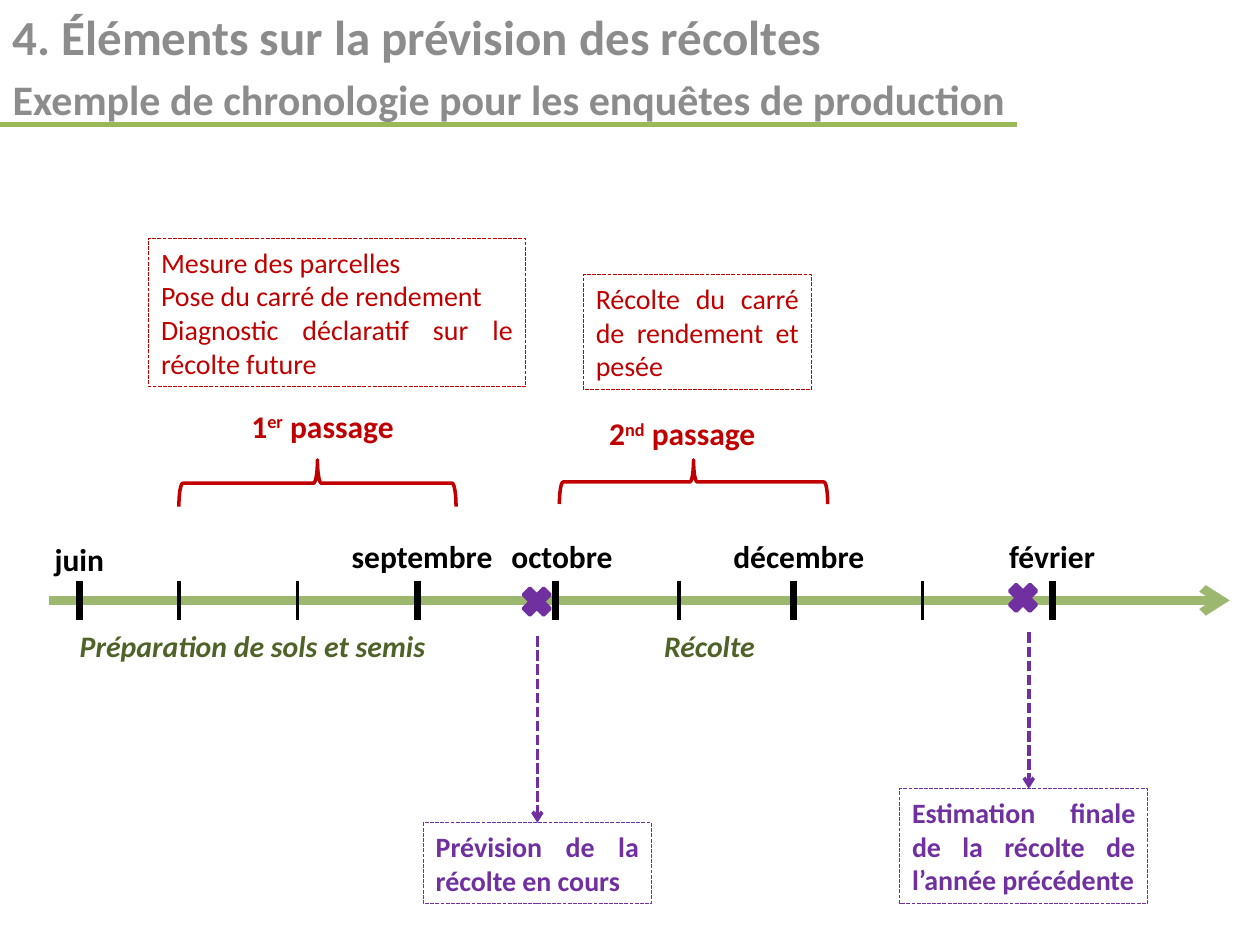
import pptx
import lxml.etree as etree
import pptx.util
from pptx.dml.color import RGBColor
from pptx.enum.dml import MSO_LINE
from pptx.enum.shapes import MSO_CONNECTOR, MSO_SHAPE
from pptx.enum.text import MSO_ANCHOR, MSO_AUTO_SIZE, PP_ALIGN
from pptx.oxml.ns import qn

WIDE, HIGH = pptx.util.Inches(10), pptx.util.Inches(7.5)
COLS, ROWS = 100, 75

GREY = RGBColor(0x8C, 0x8C, 0x8C)
LIME = RGBColor(0x98, 0xB9, 0x55)
GREEN = RGBColor(0x9C, 0xB8, 0x6E)
OLIVE = RGBColor(0x4F, 0x62, 0x28)
RED = RGBColor(0xC0, 0x00, 0x00)
PURPLE = RGBColor(0x70, 0x30, 0xA0)
BLACK = RGBColor(0x00, 0x00, 0x00)


def across(cols):
    return round(WIDE * cols / COLS)


def down(rows):
    return round(HIGH * rows / ROWS)


def place(box):
    """Turn left, top, width and height in grid cells into lengths."""
    left, top, width, height = box
    return across(left), down(top), across(width), down(height)


def style(para, size, color, bold=False, slant=False, align=PP_ALIGN.LEFT):
    para.alignment = align
    for run in para.runs:
        font = run.font
        font.name, font.size = "Calibri", pptx.util.Pt(size)
        font.bold, font.italic = bold, slant
        font.color.rgb = color


def rule(slide, start, end, color, weight, dash=None, arrow=False):
    line = slide.shapes.add_connector(
        MSO_CONNECTOR.STRAIGHT,
        across(start[0]), down(start[1]), across(end[0]), down(end[1]))
    line.line.color.rgb = color
    line.line.width = pptx.util.Pt(weight)
    if dash:
        line.line.dash_style = dash
    props = line.element.spPr
    if arrow:
        tip = etree.SubElement(props.find(qn("a:ln")), qn("a:tailEnd"))
        tip.set("type", "arrow")
    etree.SubElement(props, qn("a:effectLst"))


def shape(slide, kind, box, color, weight):
    """Add an unfilled preset shape with a plain outline."""
    form = slide.shapes.add_shape(kind, *place(box))
    form.shadow.inherit = False
    form.fill.background()
    form.line.color.rgb = color
    form.line.width = pptx.util.Pt(weight)
    return form


def label(slide, box, parts, size, color, slant=False):
    """Centred bold text; the second of several parts is raised."""
    frame = slide.shapes.add_textbox(*place(box)).text_frame
    frame.word_wrap = True
    frame.auto_size = MSO_AUTO_SIZE.SHAPE_TO_FIT_TEXT
    para = frame.paragraphs[0]
    for spot, part in enumerate(parts):
        run = para.add_run()
        run.text = part
        if spot == 1:
            run.font.bold = True
            para.runs[spot].font.size = pptx.util.Pt(size)
            props = para.runs[spot]._r.find(qn("a:rPr"))
            props.set("baseline", "30000")
    style(para, size, color, True, slant, PP_ALIGN.CENTER)


def note(slide, box, text, color, bold=False):
    form = shape(slide, MSO_SHAPE.RECTANGLE, box, color, 0.75)
    form.line.dash_style = MSO_LINE.SQUARE_DOT
    frame = form.text_frame
    frame.word_wrap = True
    frame.auto_size = MSO_AUTO_SIZE.SHAPE_TO_FIT_TEXT
    frame.vertical_anchor = MSO_ANCHOR.MIDDLE
    frame.text = text
    for para in frame.paragraphs:
        style(para, 16, color, bold, align=PP_ALIGN.JUSTIFY)


def heading(slide, box):
    left, top, width, height = box
    title = slide.shapes.title.element
    title.getparent().remove(title)
    body = slide.placeholders[1]
    body.left, body.top, body.width, body.height = place(box)
    frame = body.text_frame
    frame.vertical_anchor = MSO_ANCHOR.TOP
    frame.text = ("4. Éléments sur la prévision des récoltes\n"
                  "Exemple de chronologie pour les enquêtes de production")
    for para, size in zip(frame.paragraphs, (28, 24)):
        style(para, size, GREY, True)
    base = top + height * 0.9
    rule(slide, (left, base), (left + width * 0.807, base), LIME, 3)


def axis(slide, box):
    """Time arrow with month ticks; named months get a thick tick."""
    left, top, width, height = box
    mid = top + height / 2
    rule(slide, (left, mid), (left + width, mid), GREEN, 5, arrow=True)
    # tick offset, month, label shift, label rise
    months = [(2.4, "juin", 0, 3.7), (10.3, "", 0, 0), (19.7, "", 0, 0),
              (29.2, "septembre", 0.4, 4), (40.2, "octobre", 0.5, 4),
              (50, "", 0, 0), (59.1, "décembre", 0.4, 4),
              (69.3, "", 0, 0), (79.6, "février", 0, 4)]
    for step, name, shift, rise in months:
        x = left + step
        rule(slide, (x, top), (x, top + height), BLACK, 4 if name else 2)
        if name:
            label(slide, (x + shift - 6.7, top - rise, 13.4, 4),
                  [name], 18, BLACK)
    for step, span, name in [(0, 32.3, "Préparation de sols et semis"),
                             (46.5, 11.8, "Récolte")]:
        label(slide, (left + step, top + height + 0.1, span, 3.9),
              [name], 17, OLIVE, True)


def visit(slide, box, parts, shift, rise, tasks, text):
    """Brace filling the box, its caption above and the tasks note."""
    left, top, width, height = box
    x, y = left + width / 2, top + height / 2
    brace = shape(slide, MSO_SHAPE.RIGHT_BRACE,
                  (x - height / 2, y - width / 2, height, width), RED, 2)
    brace.rotation = 270
    label(slide, (x + shift - 7.85, top - rise, 15.7, 4), parts, 18, RED)
    note(slide, tasks, text, RED)


def result(slide, box, text, start, lean):
    """Note filling the box, reached by an arrow from a cross at start."""
    left, top, width, height = box
    x = left + width / 2
    cross = shape(slide, MSO_SHAPE.MATH_MULTIPLY,
                  (x - 1.6, start, 3.1, 3.1), PURPLE, 2)
    cross.fill.solid()
    cross.fill.fore_color.rgb = PURPLE
    rule(slide, (x + lean, start + 4.3), (x + lean, top), PURPLE, 2,
         MSO_LINE.SQUARE_DOT, True)
    note(slide, box, text, PURPLE, True)


def main():
    deck = pptx.Presentation()
    deck.slide_width, deck.slide_height = WIDE, HIGH
    slide = deck.slides.add_slide(deck.slide_layouts[0])
    heading(slide, (0, 0, COLS, 11))
    axis(slide, (3.9, 46.1, 93.7, 3.1))
    visit(slide, (14.2, 36.5, 22, 3.7), ["1", "er", " passage"], 0.4, 4.7,
          (11.8, 18.9, 29.9, 11.8),
          "Mesure des parcelles\nPose du carré de rendement\n"
          "Diagnostic déclaratif sur le récolte future")
    visit(slide, (44.4, 36.5, 21.3, 3.5), ["2", "nd", " passage"], -0.9, 4.1,
          (46.3, 21.8, 18.1, 9.1), "Récolte du carré de rendement et pesée")
    result(slide, (33.6, 65.3, 18.1, 6.4),
           "Prévision de la récolte en cours", 46.2, 0)
    result(slide, (71.4, 62.6, 19.7, 9.1),
           "Estimation finale de la récolte de l’année précédente", 45.9, 0.4)
    deck.save("out.pptx")


if __name__ == "__main__":
    main()
